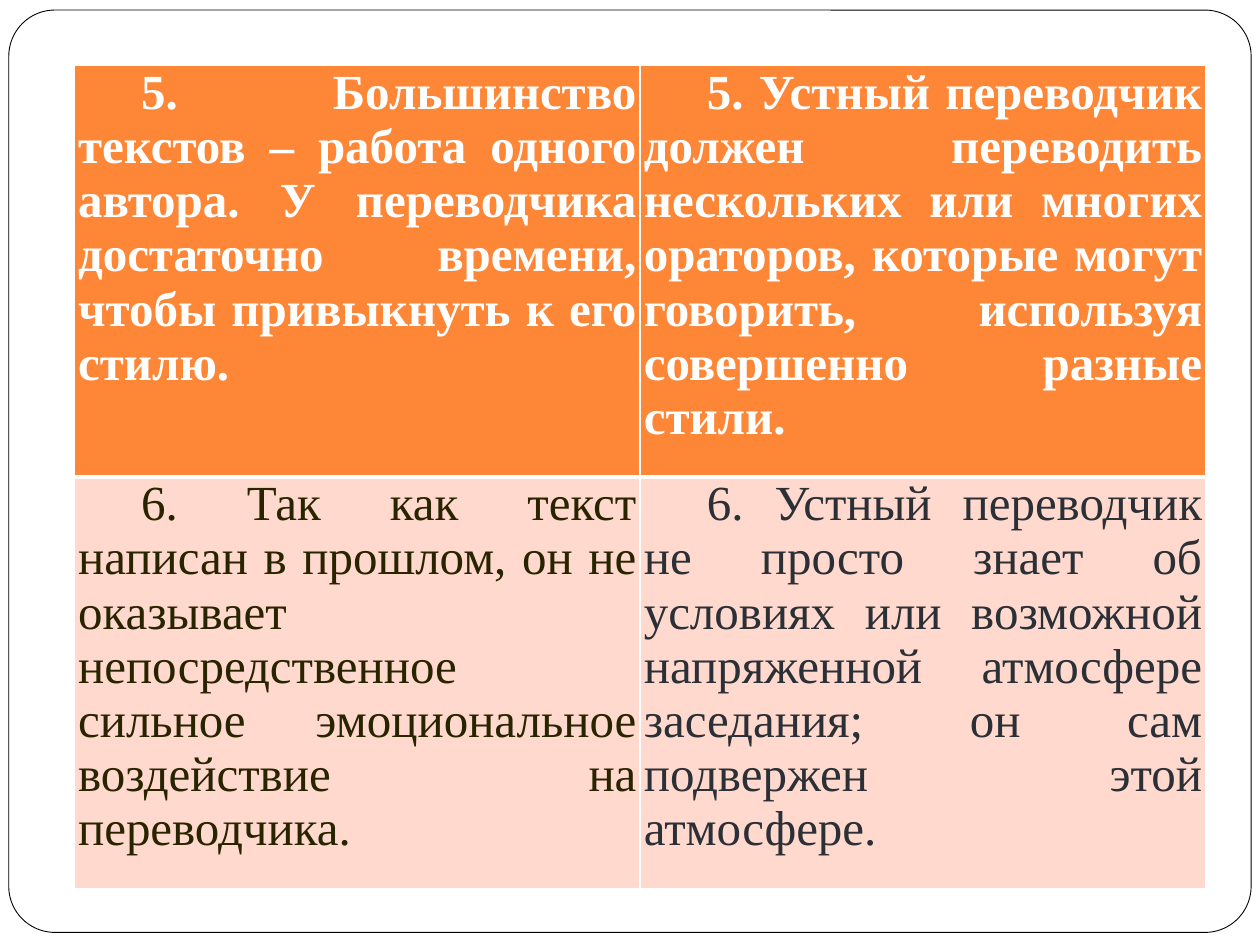
from lxml.etree import SubElement
from pptx import Presentation
from pptx.dml.color import RGBColor
from pptx.enum.shapes import MSO_SHAPE
from pptx.enum.text import PP_ALIGN
from pptx.oxml.ns import qn
from pptx.util import Inches, Pt

WHITE = RGBColor(0xFF, 0xFF, 0xFF)
BLACK = RGBColor(0x00, 0x00, 0x00)
ORANGE = RGBColor(0xFE, 0x86, 0x37)
PINK = RGBColor(0xFF, 0xD9, 0xCE)
OLIVE = RGBColor(0x29, 0x24, 0x00)
SLATE = RGBColor(0x2B, 0x2F, 0x36)


def write_text(cell, text, color, bold=False, size=28, font="Times New Roman", indent=0.5):
    paragraph = cell.text_frame.paragraphs[0]
    paragraph.alignment = PP_ALIGN.JUSTIFY
    properties = paragraph._p.get_or_add_pPr()
    properties.set("marL", "0")
    properties.set("indent", str(Inches(indent)))
    run = paragraph.add_run()
    run.text = text
    run.font.name = font
    run.font.size = Pt(size)
    run.font.bold = bold
    run.font.color.rgb = color


def add_borders(cell, widths, color):
    properties = cell._tc.get_or_add_tcPr()
    for side, width in widths.items():
        border = SubElement(properties, qn(f"a:ln{side}"), w=str(Pt(width)))
        fill = SubElement(border, qn("a:solidFill"))
        SubElement(fill, qn("a:srgbClr"), val=str(color))


presentation = Presentation()
presentation.slide_width = Inches(10)
presentation.slide_height = Inches(7.5)
slide = presentation.slides.add_slide(presentation.slide_layouts[6])

frame = slide.shapes.add_shape(
    MSO_SHAPE.ROUNDED_RECTANGLE, Inches(0.07), Inches(0.08), Inches(9.86), Inches(7.32)
)
frame.adjustments[0] = 0.05
frame.shadow.inherit = False
frame.fill.solid()
frame.fill.fore_color.rgb = WHITE
frame.line.color.rgb = BLACK
frame.line.width = Pt(0.5)

rows = [
    (ORANGE, True, {"L": 1, "R": 1, "T": 1, "B": 3}, [
        ("5. Большинство текстов – работа одного автора. У переводчика достаточно "
         "времени, чтобы привыкнуть к его стилю. ", WHITE),
        ("5. Устный переводчик должен переводить нескольких или многих ораторов, "
         "которые могут говорить, используя совершенно разные стили. ", WHITE),
    ]),
    (PINK, False, {"L": 1, "R": 1, "T": 3, "B": 1}, [
        ("6. Так как текст написан в прошлом, он не оказывает непосредственное "
         "сильное эмоциональное воздействие на переводчика. ", OLIVE),
        ("6. Устный переводчик не просто знает об условиях или возможной напряженной "
         "атмосфере заседания; он сам подвержен этой атмосфере. ", SLATE),
    ]),
]

table = slide.shapes.add_table(
    len(rows), 2, Inches(0.59), Inches(0.52), Inches(8.98), Inches(6.53)
).table

for row_index, (background, bold, widths, entries) in enumerate(rows):
    for column_index, (text, color) in enumerate(entries):
        cell = table.cell(row_index, column_index)
        cell.margin_left = cell.margin_right = Inches(0.03)
        cell.margin_top = cell.margin_bottom = 0
        add_borders(cell, widths, WHITE)
        cell.fill.solid()
        cell.fill.fore_color.rgb = background
        write_text(cell, text, color, bold=bold)

presentation.save("out.pptx")
